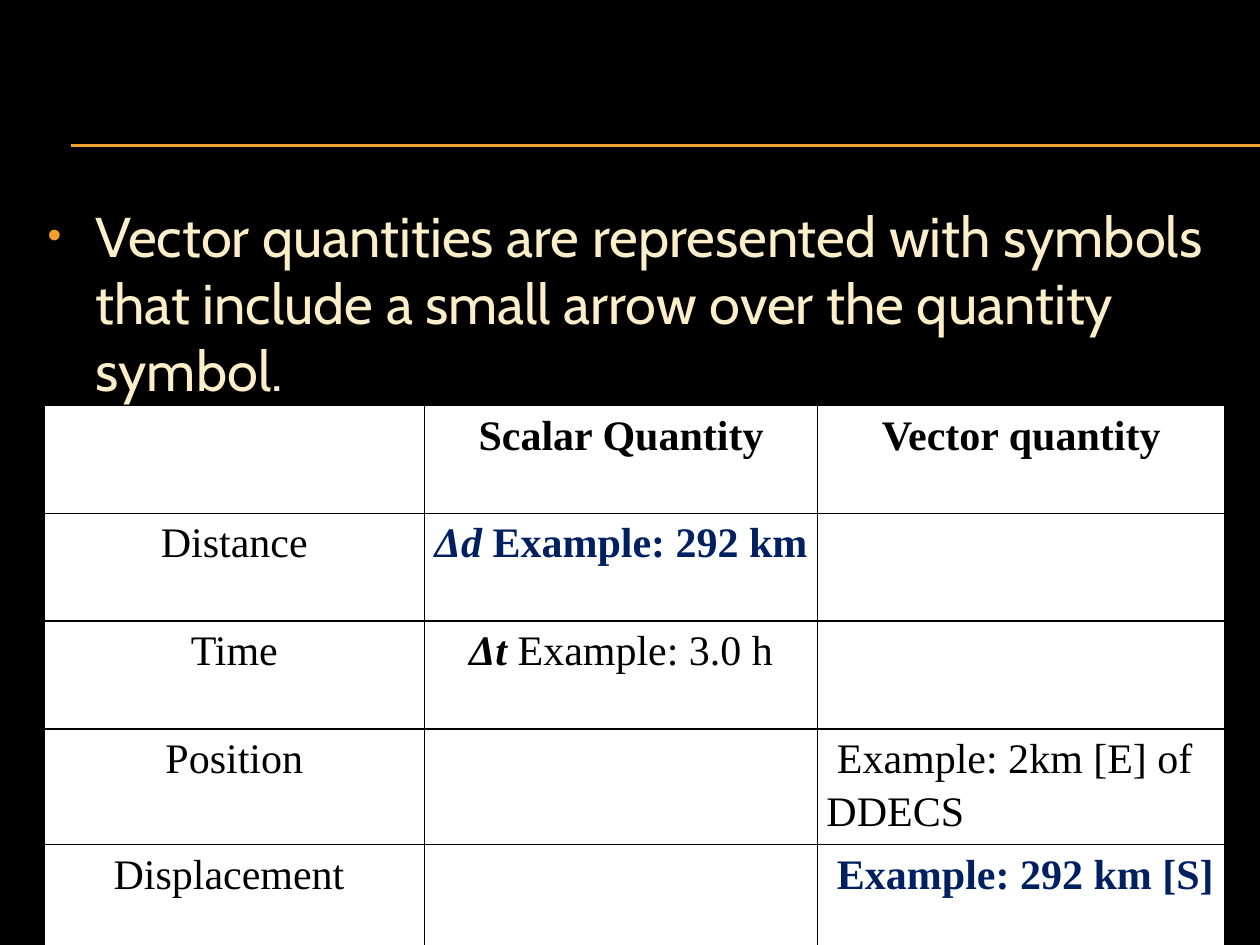
from dataclasses import dataclass

import pptx
import pptx.dml.color
import pptx.enum.shapes
import pptx.enum.text
import pptx.oxml
import pptx.oxml.ns
import pptx.util
from lxml import etree

Inches, Pt = pptx.util.Inches, pptx.util.Pt
RGB = pptx.dml.color.RGBColor.from_string
qn = pptx.oxml.ns.qn


@dataclass(frozen=True)
class Theme:
    """Colours, fonts and type sizes of the slide."""
    back: str = "000000"
    accent: str = "F0A22E"
    body: str = "FBEEC9"
    paper: str = "FFFFFF"
    ink: str = "000000"
    answer: str = "002060"
    body_font: str = "Cabin"
    table_font: str = "Times New Roman"
    body_size: float = 32
    table_size: float = 24
    rule_width: float = 0.75
    border_width: float = 1


THEME = Theme()
WIDTH, HEIGHT = 10, 7.5
COLUMNS = (3.02, 3.12, 3.23)
STYLES = {
    "plain": dict(color=THEME.ink, bold=False, italic=False),
    "head": dict(color=THEME.ink, bold=True, italic=False),
    "symbol": dict(color=THEME.ink, bold=True, italic=True),
    "answer": dict(color=THEME.answer, bold=True, italic=False),
    "answer symbol": dict(color=THEME.answer, bold=True, italic=True),
}
BODY = ("Vector quantities are represented with symbols that include "
        "a small arrow over the quantity symbol.")
ROWS = [
    [[], [("Scalar Quantity", "head")], [("Vector quantity", "head")]],
    [[("Distance", "plain")],
     [("Δd ", "answer symbol"), ("Example: 292 km", "answer")], []],
    [[("Time", "plain")],
     [("Δt", "symbol"), (" Example: 3.0 h", "plain")], []],
    [[("Position", "plain")], [], [(" Example: 2km [E] of DDECS", "plain")]],
    [[("Displacement ", "plain")], [],
     [(" ", "plain"), ("Example: 292 km [S]", "answer")]],
]


def assign(obj, values):
    """Set each named attribute of an object."""
    for name, value in values.items():
        setattr(obj, name, value)


def add_run(p, text, font, size, color, **formats):
    """Append a formatted run to a paragraph."""
    r = p.add_run()
    r.text = text
    assign(r.font, dict(name=font, size=Pt(size), **formats))
    r.font.color.rgb = RGB(color)


def add_rule(s, left, top, width):
    """Draw the double rule under the title area."""
    for y in (top, top + 0.01):
        line = s.shapes.add_connector(
            pptx.enum.shapes.MSO_CONNECTOR.STRAIGHT,
            Inches(left), Inches(y), Inches(left + width), Inches(y))
        line.line.color.rgb = RGB(THEME.accent)
        line.line.width = Pt(THEME.rule_width)
        etree.SubElement(line._element.spPr, qn("a:effectLst"))


def add_bullet(p, indent):
    """Give a paragraph a small accent bullet with a hanging indent."""
    pPr = p._p.get_or_add_pPr()
    pPr.set("marL", str(Inches(indent)))
    pPr.set("indent", str(-Inches(indent)))
    color = etree.SubElement(pPr, qn("a:buClr"))
    etree.SubElement(color, qn("a:srgbClr"), val=THEME.accent)
    etree.SubElement(pPr, qn("a:buSzPct"), val="70000")
    etree.SubElement(pPr, qn("a:buFont"), typeface="Arial")
    etree.SubElement(pPr, qn("a:buChar"), char="•")


def add_body(s, left, top, width, height):
    """Place the bulleted statement in its box."""
    sp = s.shapes.add_textbox(*map(Inches, (left, top, width, height)))
    tf = sp.text_frame
    tf.word_wrap = True
    p = tf.paragraphs[0]
    p.space_before = Pt(0.2 * THEME.body_size)
    add_bullet(p, 0.38)
    add_run(p, BODY, THEME.body_font, THEME.body_size, THEME.body)


def add_borders(cell):
    """Outline all four sides of a cell."""
    tcPr = cell._tc.get_or_add_tcPr()
    for i, side in enumerate(("lnL", "lnR", "lnT", "lnB")):
        ln = etree.Element(qn(f"a:{side}"), w=str(Pt(THEME.border_width)))
        fill = etree.SubElement(ln, qn("a:solidFill"))
        etree.SubElement(fill, qn("a:srgbClr"), val=THEME.ink)
        tcPr.insert(i, ln)


def fill_cell(cell, runs, align):
    """Colour, outline and write one table cell."""
    cell.fill.solid()
    cell.fill.fore_color.rgb = RGB(THEME.paper)
    add_borders(cell)
    assign(cell, dict(margin_left=Inches(0.07), margin_right=Inches(0.07),
                      margin_top=0, margin_bottom=0))
    p = cell.text_frame.paragraphs[0]
    assign(p, dict(alignment=align, line_spacing=1.15))
    for text, style in runs:
        add_run(p, text, THEME.table_font, THEME.table_size, **STYLES[style])


def add_quantities(s, left, top, width, height):
    """Place the table of scalar and vector quantities in its box."""
    table = s.shapes.add_table(
        len(ROWS), len(COLUMNS),
        *map(Inches, (left, top, width, height))).table
    assign(table, dict(first_row=False, horz_banding=False))
    for column, share in zip(table.columns, COLUMNS):
        column.width = Inches(width * share / sum(COLUMNS))
    align = pptx.enum.text.PP_ALIGN
    for i, row in enumerate(ROWS):
        table.rows[i].height = Inches(height / len(ROWS))
        for j, runs in enumerate(row):
            is_example = i > 0 and j == len(COLUMNS) - 1
            fill_cell(table.cell(i, j), runs,
                      align.LEFT if is_example else align.CENTER)


def main():
    """Build and save the slide."""
    prs = pptx.Presentation()
    assign(prs, dict(slide_width=Inches(WIDTH), slide_height=Inches(HEIGHT)))
    s = prs.slides.add_slide(prs.slide_layouts[6])
    s.background.fill.solid()
    s.background.fill.fore_color.rgb = RGB(THEME.back)
    add_rule(s, 0.56, 1.15, WIDTH - 0.56)
    add_body(s, 0.28, 1.55, 0.95 * WIDTH, 0.66 * HEIGHT)
    add_quantities(s, 0.35, 3.22, sum(COLUMNS), 0.57 * HEIGHT)
    prs.save("out.pptx")


if __name__ == "__main__":
    main()
